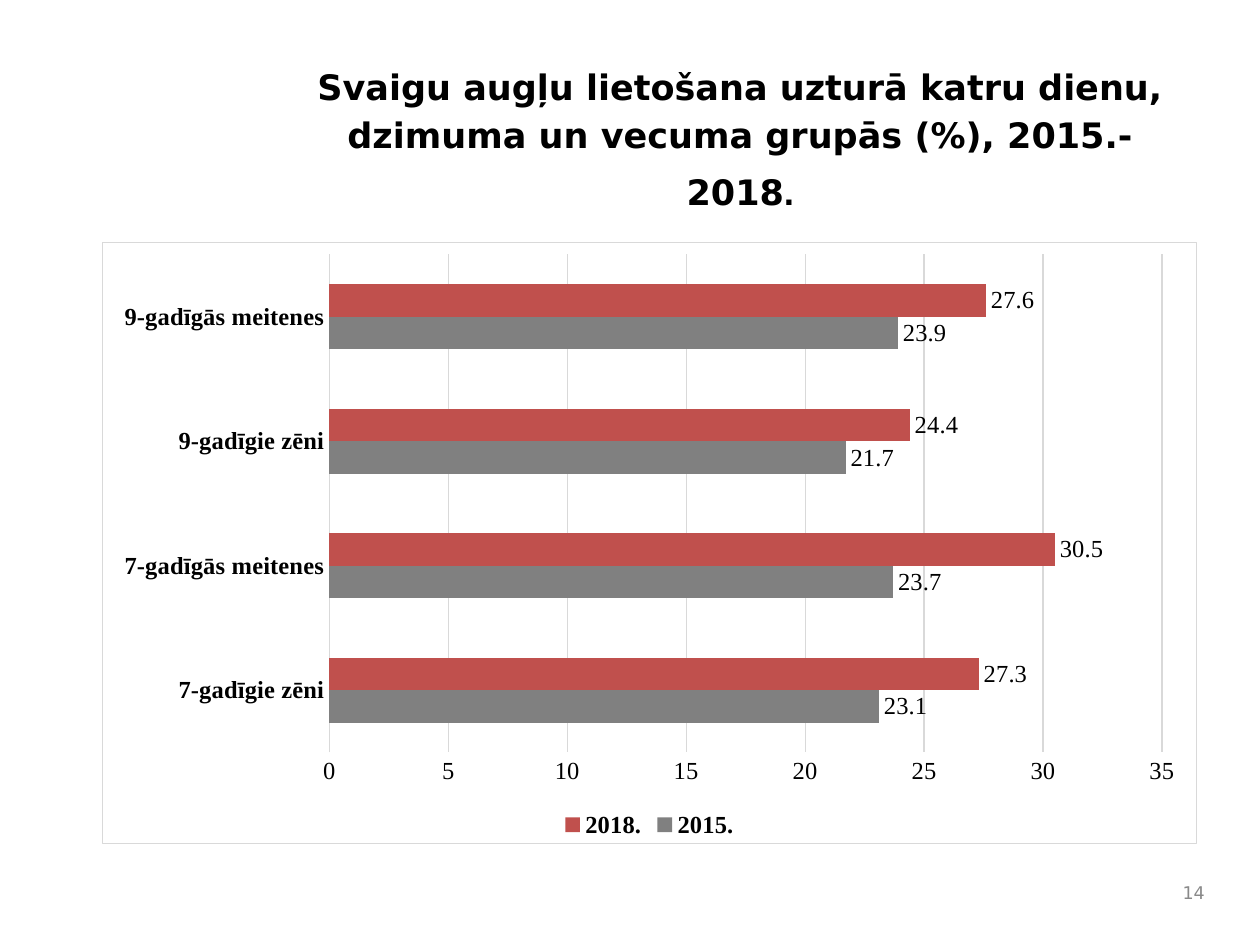
from lxml import etree
from pptx import Presentation
from pptx import util as u
from pptx.chart.data import CategoryChartData
from pptx.dml.color import RGBColor
from pptx.enum import chart as charts, text
from pptx.oxml import parse_xml

SCALE = 9144
COLORS = {"ink": "000000", "muted": "898989", "rule": "D9D9D9",
          "2015.": "808080", "2018.": "C0504D"}
SANS, SERIF = "DejaVu Sans", "Times New Roman"
GROUPS = ["7-gadīgie zēni", "7-gadīgās meitenes", "9-gadīgie zēni", "9-gadīgās meitenes"]
SHARES = {"2015.": (23.1, 23.7, 21.7, 23.9), "2018.": (27.3, 30.5, 24.4, 27.6)}


def px(length):
    return u.Emu(length * SCALE)


def color(name):
    return RGBColor.from_string(COLORS[name])


def style_font(font, name, size, ink="ink", bold=False):
    font.name = name
    font.size = u.Pt(size)
    font.bold = bold
    font.color.rgb = color(ink)


def style_rule(line):
    line.color.rgb = color("rule")
    line.width = u.Pt(0.75)


def add_text(page, area, spans, align, anchor=text.MSO_ANCHOR.TOP, spacing=1.0, after=0):
    box = page.shapes.add_textbox(*map(px, area))
    frame = box.text_frame
    frame.word_wrap = True
    frame.vertical_anchor = anchor
    para = frame.paragraphs[0]
    para.alignment = align
    para.line_spacing = spacing
    para.space_after = u.Pt(after)
    for words, style in spans:
        span = para.add_run()
        span.text = words
        style_font(span.font, **style)
    return box


def add_title(page, area):
    spans = [
        ("Svaigu augļu lietošana uzturā katru dienu, dzimuma un vecuma grupās (%), 2015.-2018",
         dict(name=SANS, size=20, bold=True)),
        (".", dict(name="Cabin", size=24, bold=True)),
    ]
    add_text(page, area, spans, text.PP_ALIGN.CENTER, spacing=1.15, after=12)


def add_page_number(page, area):
    add_text(page, area, [("14", dict(name=SANS, size=10, ink="muted"))],
             text.PP_ALIGN.RIGHT, text.MSO_ANCHOR.MIDDLE)


def add_border(chart):
    namespaces = ('xmlns:c="http://schemas.openxmlformats.org/drawingml/2006/chart" '
                  'xmlns:a="http://schemas.openxmlformats.org/drawingml/2006/main"')
    border = parse_xml(
        f'<c:spPr {namespaces}><a:noFill/><a:ln w="{u.Pt(0.75)}"><a:solidFill>'
        f'<a:srgbClr val="{COLORS["rule"]}"/></a:solidFill></a:ln></c:spPr>')
    space = chart.element
    space.find(etree.QName(space, "chart").text).addnext(border)


def style_axes(chart):
    for axis, bold in ((chart.category_axis, True), (chart.value_axis, False)):
        axis.major_tick_mark = axis.minor_tick_mark = charts.XL_TICK_MARK.NONE
        style_font(axis.tick_labels.font, SERIF, 14, bold=bold)
    style_rule(chart.category_axis.format.line)
    scale = chart.value_axis
    scale.format.line.fill.background()
    scale.minimum_scale, scale.maximum_scale, scale.major_unit = 0, 35, 5
    scale.has_major_gridlines = True
    style_rule(scale.major_gridlines.format.line)


def add_share_chart(page, area):
    data = CategoryChartData()
    data.categories = GROUPS
    for year, shares in SHARES.items():
        data.add_series(year, shares)
    chart = page.shapes.add_chart(
        charts.XL_CHART_TYPE.BAR_CLUSTERED, *map(px, area), data).chart
    style_font(chart.font, SERIF, 14)
    chart.has_title = False
    chart.has_legend = True
    chart.legend.position = charts.XL_LEGEND_POSITION.BOTTOM
    chart.legend.include_in_layout = False
    style_font(chart.legend.font, SERIF, 14, bold=True)
    style_axes(chart)
    plot = chart.plots[0]
    plot.gap_width = 182
    plot.overlap = 0
    plot.vary_by_categories = False
    for series in plot.series:
        series.format.fill.solid()
        series.format.fill.fore_color.rgb = color(series.name)
        labels = series.data_labels
        labels.show_value = True
        labels.position = charts.XL_LABEL_POSITION.OUTSIDE_END
        style_font(labels.font, SERIF, 14)
    add_border(chart)


def main():
    deck = Presentation()
    deck.slide_width, deck.slide_height = px(1000), px(750)
    page = deck.slides.add_slide(deck.slide_layouts[6])
    add_title(page, (225, 42, 725, 113))
    add_share_chart(page, (81, 192, 869, 478))
    add_page_number(page, (916, 692, 50, 33))
    deck.save("out.pptx")


if __name__ == "__main__":
    main()
